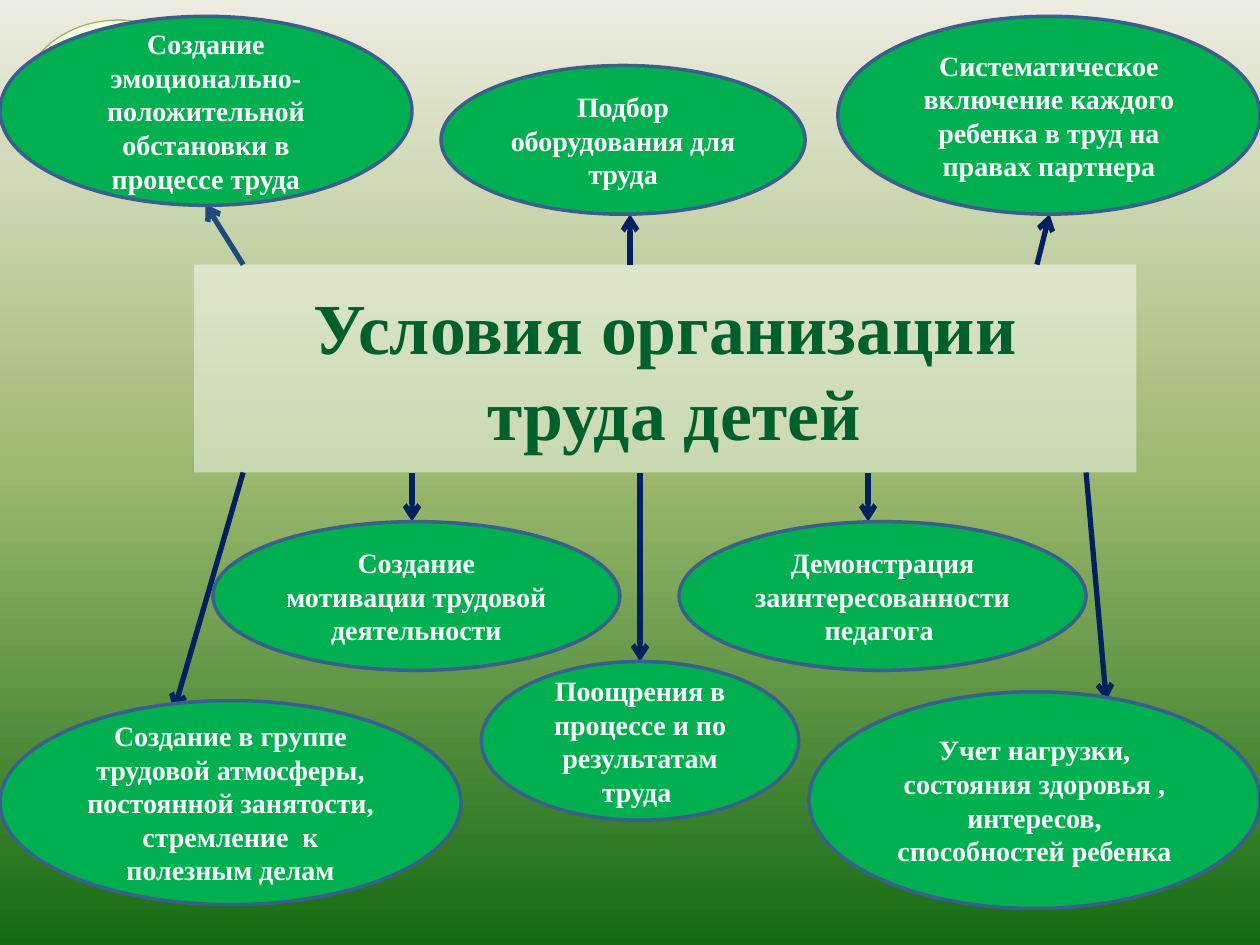
from copy import deepcopy
from dataclasses import dataclass

from lxml import etree
from pptx import Presentation
from pptx.dml.color import RGBColor
from pptx.enum.shapes import MSO_CONNECTOR, MSO_SHAPE
from pptx.enum.text import MSO_ANCHOR, MSO_AUTO_SIZE, PP_ALIGN
from pptx.oxml.ns import qn
from pptx.util import Inches, Pt

OVAL = MSO_SHAPE.OVAL
LINE = MSO_CONNECTOR.STRAIGHT
MIDDLE = MSO_ANCHOR.MIDDLE
CENTER = PP_ALIGN.CENTER
FIXED = MSO_AUTO_SIZE.NONE
rgb = RGBColor.from_string


@dataclass(frozen=True)
class Theme:
    font: str = "Times New Roman"
    head: int = 41
    body: int = 16
    green: str = "00B050"
    edge: str = "3A5F8C"
    white: str = "FFFFFF"
    dark: str = "00602B"
    navy: str = "002060"
    blue: str = "1F497D"
    leaf: str = "98B955"
    sky: tuple = ((0, "EEECE1"), (0.5, "9CB86E"), (1, "156B13"))
    pale: tuple = ((0, "DAFDA7"), (0.35, "E4FCC2"), (1, "F5FFE7"))


theme = Theme()


def grade(fill, stops, angle):
    """Fill with a three-stop linear gradient."""
    fill.gradient()
    fill.gradient_angle = angle
    first = fill.gradient_stops[0]._gs
    first.addnext(deepcopy(first))
    for stop, (place, color) in zip(fill.gradient_stops, stops):
        stop.position = place
        stop.color.rgb = rgb(color)


def write(shape, text, size, color):
    """Set centred bold text in a shape."""
    frame = shape.text_frame
    frame.word_wrap = True
    frame.auto_size = FIXED
    frame.vertical_anchor = MIDDLE
    frame.text = text
    para = frame.paragraphs[0]
    para.alignment = CENTER
    para.font.name = theme.font
    para.font.size = Pt(size)
    para.font.bold = True
    para.font.color.rgb = rgb(color)


deck = Presentation()
deck.slide_width, deck.slide_height = Inches(10), Inches(7.5)
slide = deck.slides.add_slide(deck.slide_layouts[5])
shapes = slide.shapes

# Background and the pale corner oval
grade(slide.background.fill, theme.sky, 270)
corner = shapes.add_shape(OVAL, Inches(0.16), Inches(0.16), Inches(1.56), Inches(1.33))
corner.shadow.inherit = False
grade(corner.fill, theme.pale, 90)
corner.line.color.rgb = rgb(theme.leaf)
corner.line.width = Pt(0.75)

# Title panel
top, base = 2.1, 3.75
title = shapes.title
title.left, title.top = Inches(1.54), Inches(top)
title.width, title.height = Inches(7.48), Inches(base - top)
title.fill.solid()
title.fill.fore_color.rgb = rgb(theme.white)
tint = title.fill._xPr.find(qn("a:solidFill"))[0]
etree.SubElement(tint, qn("a:alpha"), val="46000")
write(title, "Условия организации\v труда детей", theme.head, theme.dark)

# Arrows from the panel to the ovals
arrows = [
    (1.93, top, 1.63, 1.62, theme.blue),
    (5, top, 5, 1.7, theme.navy),
    (8.23, top, 8.33, 1.7, theme.navy),
    (1.93, base, 1.38, 5.64, theme.navy),
    (3.27, base, 3.27, 4.14, theme.navy),
    (5.08, base, 5.08, 5.25, theme.navy),
    (6.89, base, 6.89, 4.14, theme.navy),
    (8.62, base, 8.78, 5.56, theme.navy),
]
for *ends, color in arrows:
    arrow = shapes.add_connector(LINE, *map(Inches, ends))
    arrow.line.color.rgb = rgb(color)
    arrow.line.width = Pt(3)
    etree.SubElement(arrow.line._get_or_add_ln(), qn("a:tailEnd"), type="arrow")
    etree.SubElement(arrow._element.spPr, qn("a:effectLst"))

# Ovals with the conditions
ovals = [
    (0, 0.13, 3.27, 1.5,
     "Создание эмоционально-положительной обстановки в процессе труда"),
    (3.5, 0.52, 2.89, 1.18, "Подбор оборудования для труда"),
    (6.65, 0.13, 3.35, 1.57,
     "Систематическое включение каждого ребенка в труд на правах партнера"),
    (1.69, 4.14, 3.23, 1.18, "Создание мотивации трудовой деятельности"),
    (5.39, 4.14, 3.23, 1.18, "Демонстрация заинтересованности педагога "),
    (3.82, 5.25, 2.52, 1.26, "Поощрения в процессе и по результатам труда "),
    (0, 5.56, 3.66, 1.62,
     "Создание в группе трудовой атмосферы, постоянной занятости, "
     "стремление  к полезным делам"),
    (6.42, 5.49, 3.58, 1.72,
     "Учет нагрузки, состояния здоровья , интересов, способностей ребенка"),
]
for *box, text in ovals:
    oval = shapes.add_shape(OVAL, *map(Inches, box))
    oval.shadow.inherit = False
    oval.fill.solid()
    oval.fill.fore_color.rgb = rgb(theme.green)
    oval.line.color.rgb = rgb(theme.edge)
    oval.line.width = Pt(2)
    write(oval, text, theme.body, theme.white)

deck.save("out.pptx")
